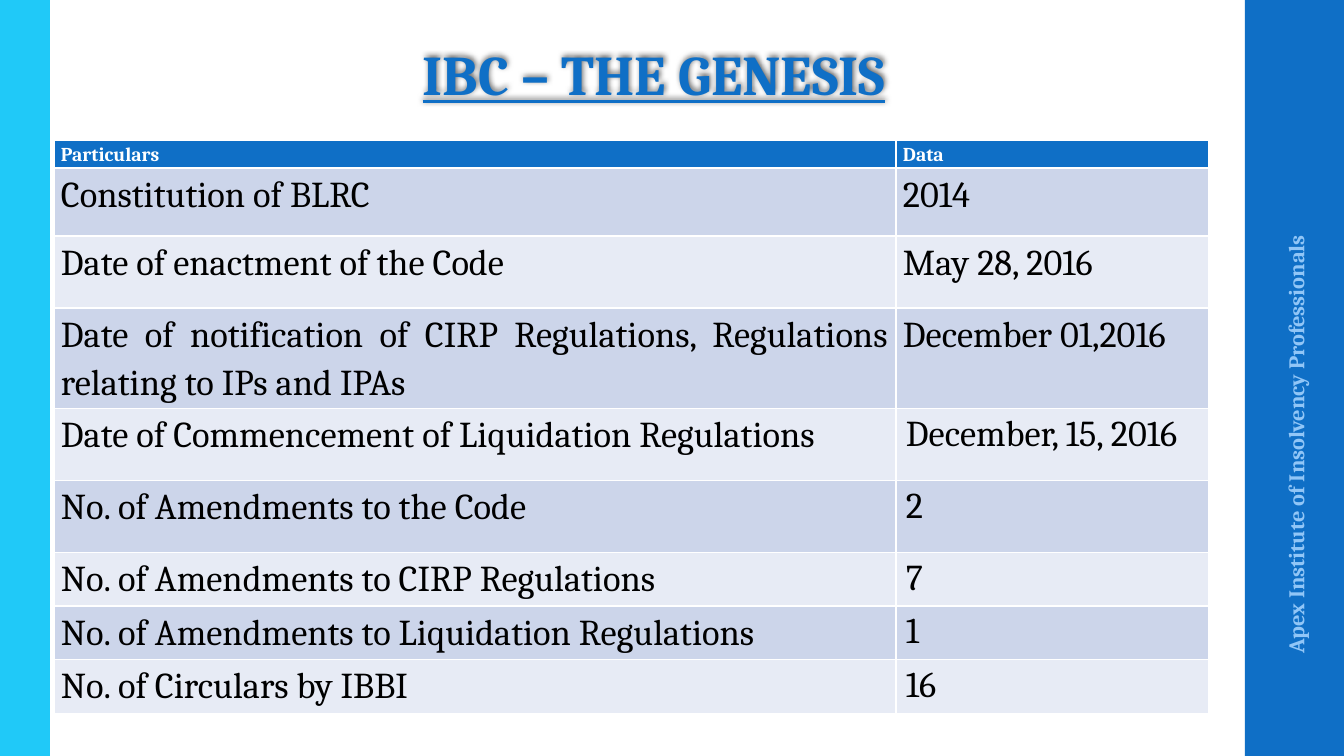
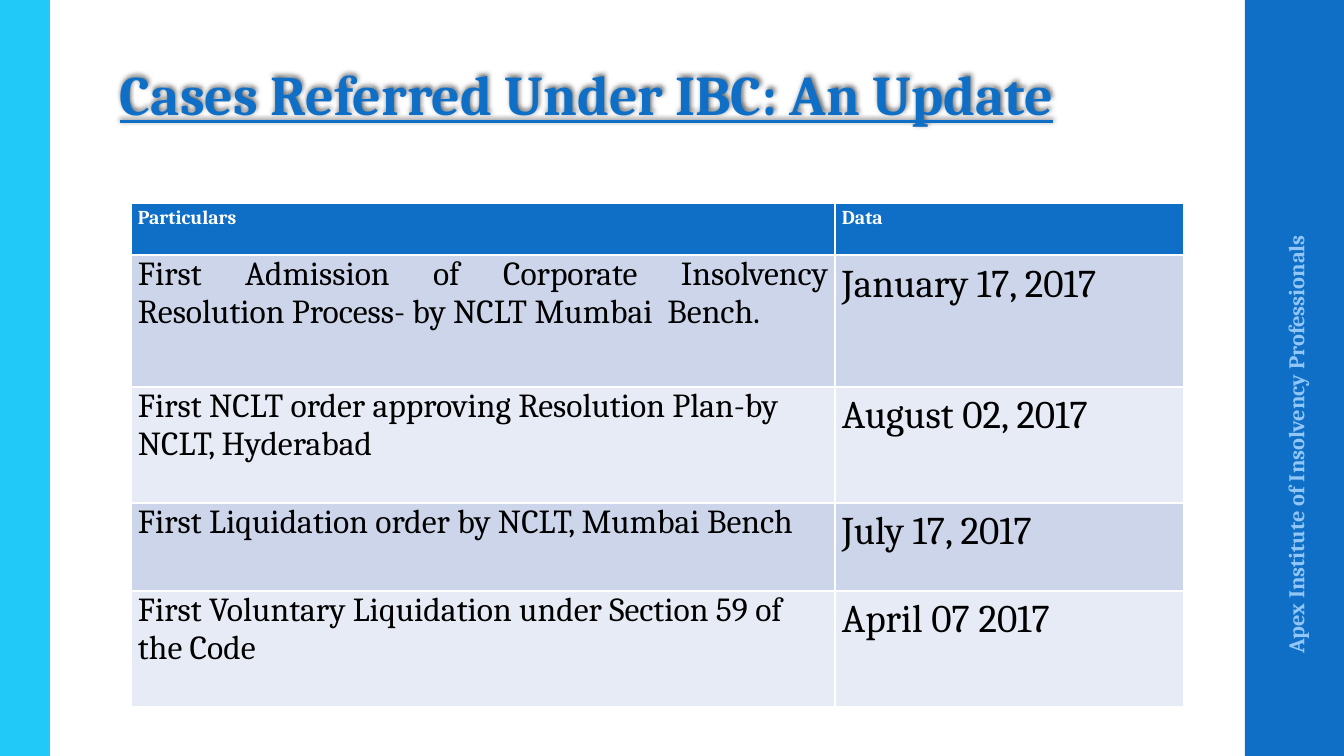
from typing import NamedTuple

from lxml.etree import SubElement
from pptx import Presentation
from pptx.dml.color import RGBColor
from pptx.enum.shapes import MSO_SHAPE
from pptx.enum.text import MSO_ANCHOR, PP_ALIGN
from pptx.oxml.ns import qn
from pptx.util import Emu, Pt

EMU_PER_INCH = 914400
PX_PER_INCH = 100.8
SLIDE_WIDTH, SLIDE_HEIGHT = 1344, 756

FONT = "Cambria"
BLUE = RGBColor(0x0F, 0x6F, 0xC6)
CYAN = RGBColor(0x20, 0xC9, 0xF8)
PALE_BLUE = RGBColor(0x91, 0xC6, 0xF7)
ROW_DARK = RGBColor(0xCC, 0xD5, 0xEA)
ROW_LIGHT = RGBColor(0xE7, 0xEB, 0xF5)
WHITE = RGBColor(0xFF, 0xFF, 0xFF)
BLACK = RGBColor(0x00, 0x00, 0x00)


class CellStyle(NamedTuple):
    """Text size, line spacing, alignment and margins of a table cell."""

    size: int
    spacing: float = 1.15
    alignment: PP_ALIGN = PP_ALIGN.JUSTIFY
    margin_x: int = 7
    margin_y: int = 0


HEADER = CellStyle(14)
FACT = CellStyle(26)
PLAIN_FACT = CellStyle(26, 1.0, PP_ALIGN.LEFT, 10, 5)
CASE = CellStyle(24, 1.0)
LEFT_CASE = CellStyle(24, 1.0, PP_ALIGN.LEFT)
CASE_DATE = CellStyle(28)

GENESIS_ROWS = [
    (68, ("Constitution of BLRC", FACT), ("2014", FACT)),
    (72, ("Date of enactment of the Code", FACT), ("May 28, 2016", FACT)),
    (97, ("Date of notification of CIRP Regulations, Regulations relating to IPs and IPAs", FACT),
     ("December 01,2016", FACT)),
    (72, ("Date of Commencement of Liquidation Regulations", FACT),
     ("December, 15, 2016", PLAIN_FACT)),
    (72, ("No. of Amendments to the Code", FACT), ("2", PLAIN_FACT)),
    (52, ("No. of Amendments to CIRP Regulations", FACT), ("7", PLAIN_FACT)),
    (52, ("No. of Amendments to Liquidation Regulations", FACT), ("1", PLAIN_FACT)),
    (52, ("No. of Circulars by IBBI", FACT), ("16", PLAIN_FACT)),
]

CASE_ROWS = [
    (132, ("First Admission of Corporate Insolvency Resolution Process- by NCLT Mumbai  Bench.", CASE),
     ("January 17, 2017", CASE_DATE)),
    (116, ("First NCLT order approving Resolution Plan-by NCLT, Hyderabad", LEFT_CASE),
     ("August 02, 2017", CASE_DATE)),
    (88, ("First Liquidation order by NCLT, Mumbai Bench", CASE), ("July 17, 2017", CASE_DATE)),
    (116, ("First Voluntary Liquidation under Section 59 of the Code", LEFT_CASE),
     ("April 07 2017", CASE_DATE)),
]


def px(length):
    """Turn pixels into EMU."""
    return Emu(round(length * EMU_PER_INCH / PX_PER_INCH))


def style_paragraph(paragraph, size, color, bold=False):
    """Set the font of a whole paragraph."""
    font = paragraph.font
    font.name, font.size, font.bold = FONT, Pt(size), bold
    font.color.rgb = color


def add_band(slide, left, width, color):
    """Add a full-height vertical band."""
    band = slide.shapes.add_shape(MSO_SHAPE.RECTANGLE, px(left), 0, px(width), px(SLIDE_HEIGHT))
    band.shadow.inherit = False
    band.fill.solid()
    band.fill.fore_color.rgb = color
    band.line.fill.background()


def add_text(slide, box, text, size, color, anchor):
    """Add a bold one-paragraph text box and return it."""
    shape = slide.shapes.add_textbox(*map(px, box))
    frame = shape.text_frame
    frame.word_wrap = True
    frame.vertical_anchor = anchor
    frame.text = text
    style_paragraph(frame.paragraphs[0], size, color, bold=True)
    return shape


def add_text_shadow(shape):
    """Give the text of an unfilled shape a soft shadow above it."""
    shape.shadow.inherit = False
    effects = shape.element.spPr.find(qn("a:effectLst"))
    shadow = SubElement(effects, qn("a:outerShdw"), blurRad="50800", dist="38100",
                        dir="16200000", rotWithShape="0")
    color = SubElement(shadow, qn("a:srgbClr"), val=str(BLACK))
    SubElement(color, qn("a:alpha"), val="60000")


def add_title(slide, text, height, alignment):
    """Add the underlined slide title."""
    title = add_text(slide, (110, 32, 1088, height), text, 40, BLUE, MSO_ANCHOR.BOTTOM)
    title.text_frame.margin_top = px(3)
    paragraph = title.text_frame.paragraphs[0]
    paragraph.alignment = alignment
    paragraph.line_spacing = 0.9
    paragraph.font.underline = True
    add_text_shadow(title)


def fill_cell(cell, text, style, fill, color, bold):
    """Write and format one table cell."""
    cell.fill.solid()
    cell.fill.fore_color.rgb = fill
    cell.margin_left = cell.margin_right = px(style.margin_x)
    cell.margin_top = cell.margin_bottom = px(style.margin_y)
    cell.text = text
    paragraph = cell.text_frame.paragraphs[0]
    paragraph.alignment = style.alignment
    paragraph.line_spacing = style.spacing
    style_paragraph(paragraph, style.size, color, bold)


def add_data_table(slide, left, top, widths, header_height, body):
    """Add a two-column table with a blue header and banded rows."""
    rows = [(header_height, ("Particulars", HEADER), ("Data", HEADER)), *body]
    height = sum(row[0] for row in rows)
    table = slide.shapes.add_table(len(rows), len(widths), px(left), px(top),
                                   px(sum(widths)), px(height)).table
    for column, width in zip(table.columns, widths):
        column.width = px(width)
    for row_index, (row_height, *cells) in enumerate(rows):
        table.rows[row_index].height = px(row_height)
        is_header = row_index == 0
        band_fill = ROW_DARK if row_index % 2 else ROW_LIGHT
        fill, color = (BLUE, WHITE) if is_header else (band_fill, BLACK)
        for column_index, (text, style) in enumerate(cells):
            fill_cell(table.cell(row_index, column_index), text, style, fill, color, is_header)


def add_base_slide(presentation):
    """Add a blank slide with both bands and the sideways institute name."""
    slide = presentation.slides.add_slide(presentation.slide_layouts[6])
    add_band(slide, 1245, 99, BLUE)
    add_band(slide, 0, 50, CYAN)
    institute = add_text(slide, (1070, 418, 451, 40), "Apex Institute of Insolvency Professionals",
                         16, PALE_BLUE, MSO_ANCHOR.MIDDLE)
    institute.rotation = 270
    return slide


def main():
    """Build and save the presentation."""
    presentation = Presentation()
    presentation.slide_width, presentation.slide_height = px(SLIDE_WIDTH), px(SLIDE_HEIGHT)

    genesis = add_base_slide(presentation)
    add_title(genesis, "IBC – THE GENESIS", 81, PP_ALIGN.CENTER)
    add_data_table(genesis, 54, 140, (842, 313), 28, GENESIS_ROWS)

    cases = add_base_slide(presentation)
    add_title(cases, "Cases Referred Under IBC: An Update", 101, PP_ALIGN.LEFT)
    add_data_table(cases, 131, 203, (704, 349), 52, CASE_ROWS)

    presentation.save("out.pptx")


if __name__ == "__main__":
    main()
